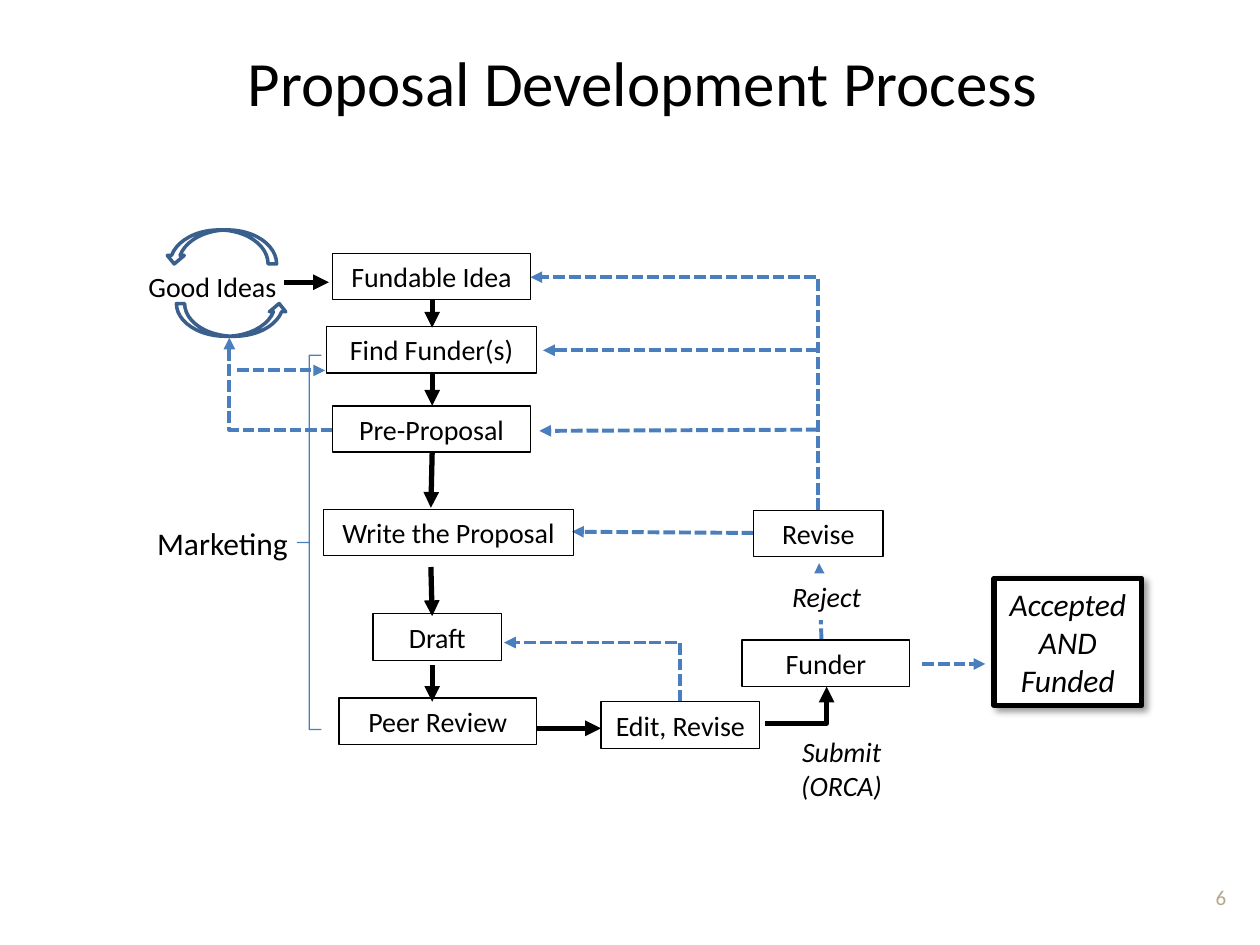
import pptx
import pptx.util
import pptx.dml.color
import pptx.enum.dml
import pptx.enum.shapes
import pptx.enum.text
import pptx.oxml
import pptx.oxml.ns

Inches, Pt = pptx.util.Inches, pptx.util.Pt
RGBColor = pptx.dml.color.RGBColor
SHAPE = pptx.enum.shapes.MSO_SHAPE
CONNECTOR = pptx.enum.shapes.MSO_CONNECTOR
ALIGN = pptx.enum.text.PP_ALIGN
ANCHOR = pptx.enum.text.MSO_ANCHOR
FIT = pptx.enum.text.MSO_AUTO_SIZE
DASH = pptx.enum.dml.MSO_LINE

BLACK = RGBColor(0x00, 0x00, 0x00)
WHITE = RGBColor(0xFF, 0xFF, 0xFF)
BLUE = RGBColor(0x4B, 0x7E, 0xBC)
NAVY = RGBColor(0x3A, 0x5F, 0x8C)
TAN = RGBColor(0xB5, 0xA7, 0x88)

TITLE = "Proposal Development Process"
BOX_H = 0.37

# text, left, top, width, line width
STEPS = [
    ("Fundable Idea", 2.64, 2.01, 1.57, 0.75),
    ("Find Funder(s)", 2.59, 2.59, 1.67, 0.75),
    ("Pre-Proposal", 2.64, 3.22, 1.57, 1),
    ("Write the Proposal", 2.57, 4.04, 1.98, 0.5),
    ("Draft", 2.96, 4.87, 1.02, 0.75),
    ("Peer Review", 2.69, 5.54, 1.57, 0.75),
    ("Edit, Revise", 4.77, 5.57, 1.26, 0.75),
    ("Funder", 5.89, 5.08, 1.33, 0.75),
    ("Revise", 5.98, 4.05, 1.03, 0.75),
]
# text, left, top, width, height, line width, size
OUTCOMES = [
    ("Submit (ORCA)", 6.21, 5.78, 0.94, 0.64, 0, 16),
    ("Reject", 6.09, 4.55, 0.94, BOX_H, 0, 16),
    ("Accepted AND Funded", 7.89, 4.59, 1.17, 1.01, 3, 18),
]
# text, left, top, width, height, format of the frame, alignment, size, colour
LABELS = [
    ("Good Ideas", 1.08, 2.09, 1.34, 0.29, {"word_wrap": True}, ALIGN.LEFT, 16, BLACK),
    ("Marketing", 1.14, 4.11, 1.25, 0.4, {"word_wrap": False}, ALIGN.CENTER, 18, BLACK),
    ("6", 7.5, 6.92, 2.33, 0.4,
     {"word_wrap": True, "vertical_anchor": ANCHOR.MIDDLE}, ALIGN.RIGHT, 12, TAN),
]
# left, top, width, height, flipped
CYCLE_ARROWS = [(1.71, 2.1, 0.26, 0.88, True), (1.62, 1.52, 0.27, 0.88, False)]

FORWARD = {"color": BLACK, "width": 3}
RETURN = {"color": BLUE, "width": 2.25, "dash": DASH.SQUARE_DOT}
# start x, start y, end x, end y
FORWARD_ARROWS = [
    (2.25, 2.24, 2.61, 2.24),
    (3.43, 2.38, 3.43, 2.6),
    (3.43, 2.97, 3.43, 3.22),
    (3.43, 3.59, 3.42, 4.03),
    (3.42, 4.5, 3.43, 4.89),
    (3.43, 5.28, 3.43, 5.57),
    (4.26, 5.78, 4.77, 5.78),
]
RETURN_ARROWS = [
    (1.88, 2.94, 2.58, 2.94),
    (6.52, 5.08, 6.5, 4.47),
    (7.32, 5.27, 7.82, 5.27),
    (6.49, 2.78, 4.31, 2.78),
    (6.49, 3.41, 4.28, 3.42),
    (5.98, 4.23, 4.54, 4.22),
]
# start x, start y, end x, end y, rotation, style
ELBOWS = [
    (2.64, 3.41, 1.82, 2.68, 180, RETURN),
    (5.4, 5.57, 4, 5.1, 270, RETURN),
    (6.07, 5.74, 6.56, 5.45, 0, FORWARD),
    (6.49, 4.05, 4.21, 2.2, 270, RETURN),
]


def child(parent, xml):
    parent.append(pptx.oxml.parse_xml(xml.replace(">", f" {pptx.oxml.ns.nsdecls('a')}>", 1)))


def apply(target, **values):
    for name, value in values.items():
        setattr(target, name, value)


def write(sp, text, size, align=ALIGN.CENTER, color=BLACK, italic=False, **frame):
    tf = sp.text_frame
    apply(tf, **frame)
    p = tf.paragraphs[0]
    p.alignment = align
    r = p.add_run()
    r.text = text
    apply(r.font, name="Calibri", size=Pt(size), italic=italic)
    r.font.color.rgb = color


def outline(sp, color, width, dash=None):
    if not width:
        sp.line.fill.background()
        return
    sp.line.color.rgb = color
    sp.line.width = Pt(width)
    if dash:
        sp.line.dash_style = dash


def shape(kind, box, color, width, fill=None):
    sp = s.shapes.add_shape(kind, *map(Inches, box))
    sp.shadow.inherit = False
    if fill is None:
        sp.fill.background()
    else:
        sp.fill.solid()
        sp.fill.fore_color.rgb = fill
    outline(sp, color, width)
    return sp


def arrow(x1, y1, x2, y2, style, kind=CONNECTOR.STRAIGHT):
    cxn = s.shapes.add_connector(kind, *map(Inches, (x1, y1, x2, y2)))
    outline(cxn, **style)
    child(cxn.line._get_or_add_ln(), '<a:tailEnd type="triangle"></a:tailEnd>')
    child(cxn._element.spPr, "<a:effectLst></a:effectLst>")
    return cxn


def elbow(x1, y1, x2, y2, rotation, style):
    """Draw a one-corner arrow; a rotation of 270 leaves its start vertically."""
    w, h = abs(x2 - x1), abs(y2 - y1)
    if rotation == 270:
        w, h = h, w
    left, top = (x1 + x2 - w) / 2, (y1 + y2 - h) / 2
    ys = (top, top + h) if rotation == 180 else (top + h, top)
    cxn = arrow(left, ys[0], left + w, ys[1], style, CONNECTOR.ELBOW)
    cxn._element.spPr.prstGeom.set("prst", "bentConnector2")
    cxn._element.spPr.xfrm.set("rot", str(rotation * 60000))


prs = pptx.Presentation()
prs.slide_width, prs.slide_height = Inches(10), Inches(7.5)
s = prs.slides.add_slide(prs.slide_layouts[5])

title = s.shapes.title
apply(title, left=Inches(0.6), top=Inches(0.14), width=Inches(9), height=Inches(1.01))
write(title, TITLE, 36, vertical_anchor=ANCHOR.MIDDLE)

for *box, flipped in CYCLE_ARROWS:
    sp = shape(SHAPE.CURVED_RIGHT_ARROW, box, NAVY, 2)
    sp.rotation = 90
    if flipped:
        for flip in ("flipH", "flipV"):
            sp._element.spPr.xfrm.set(flip, "1")

for ends in FORWARD_ARROWS:
    arrow(*ends, FORWARD)
for ends in RETURN_ARROWS:
    arrow(*ends, RETURN)
for bend in ELBOWS:
    elbow(*bend)

boxed = {"word_wrap": True, "auto_size": FIT.SHAPE_TO_FIT_TEXT}
for text, left, top, width, line in STEPS:
    fill = WHITE if text == "Funder" else None
    sp = shape(SHAPE.RECTANGLE, (left, top, width, BOX_H), BLACK, line, fill)
    write(sp, text, 16, **boxed)

for text, *box, line, size in OUTCOMES:
    sp = shape(SHAPE.RECTANGLE, box, BLACK, line, WHITE)
    write(sp, text, size, italic=True, **boxed)
    if line:
        effects = sp._element.spPr.find(pptx.oxml.ns.qn("a:effectLst"))
        child(effects, f'<a:outerShdw blurRad="{Pt(4)}" dist="{Pt(3)}" dir="2700000" '
              'algn="tl" rotWithShape="0"><a:srgbClr val="000000">'
              '<a:alpha val="40000"/></a:srgbClr></a:outerShdw>')

for text, *box, frame, align, size, color in LABELS:
    write(s.shapes.add_textbox(*map(Inches, box)), text, size, align, color, **frame)

brace = shape(SHAPE.LEFT_BRACE, (2.36, 2.82, 0.19, 2.97), BLUE, 0.75)
brace.adjustments[0], brace.adjustments[1] = 0, 0.5

prs.save("out.pptx")
